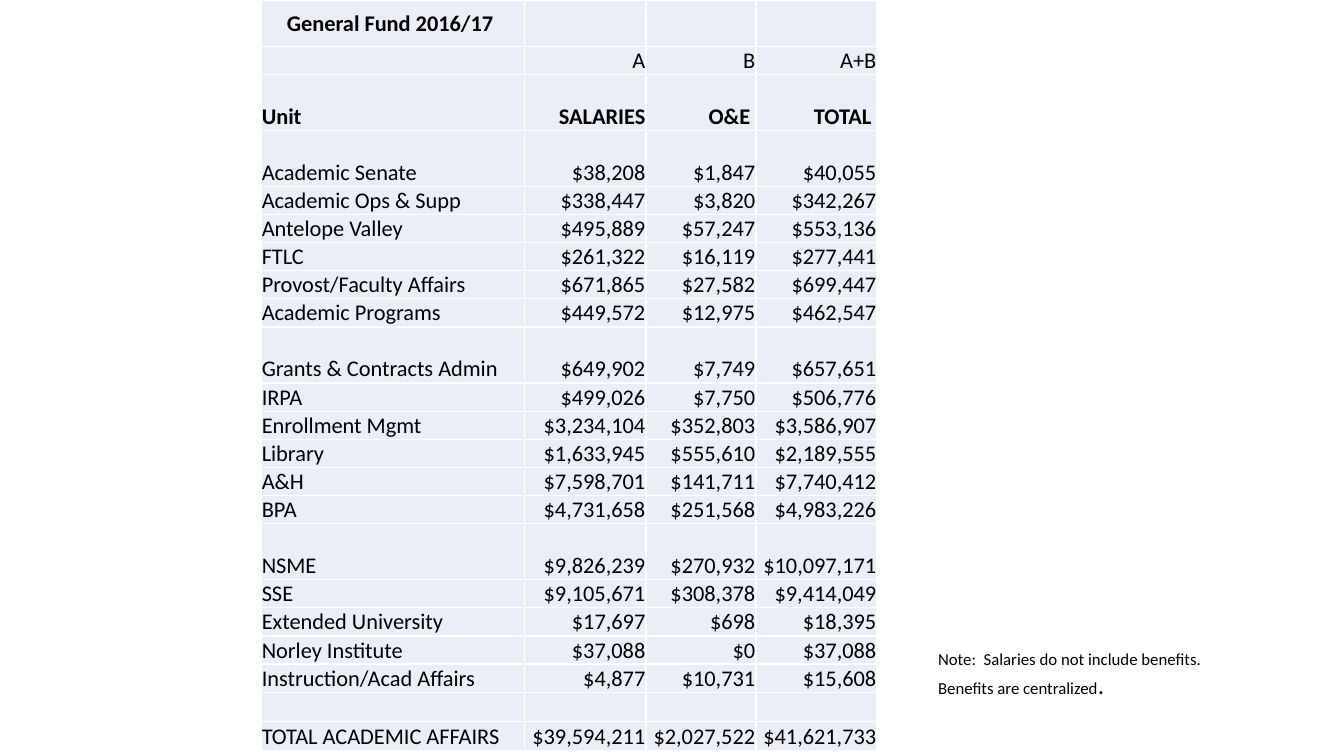
from lxml import etree
from pptx import Presentation
from pptx.dml.color import RGBColor
from pptx.enum.text import MSO_ANCHOR, MSO_AUTO_SIZE, PP_ALIGN
from pptx.oxml.ns import qn
from pptx.util import Pt

LEFT, MID, RIGHT = PP_ALIGN.LEFT, PP_ALIGN.CENTER, PP_ALIGN.RIGHT
CENTRE, BASE = MSO_ANCHOR.MIDDLE, MSO_ANCHOR.BOTTOM
GROW = MSO_AUTO_SIZE.SHAPE_TO_FIT_TEXT
FONT = "Calibri"
HUES = {"text": "000000", "band": "EAEFF7", "rule": "FFFFFF"}
COLS = (188, 87, 78.5, 86.5)
HIGH = {0: 33, 2: 40, 3: 40, 9: 40, 15: 40, 20: 20.7, 21: 20.7}
ROW = 20.1
FUNDS = [
    ("General Fund 2016/17 ", "", "", ""),
    ("", "A", "B", "A+B"),
    ("Unit", "SALARIES", "O&E ", "TOTAL "),
    ("Academic Senate", "$38,208", "$1,847", "$40,055"),
    ("Academic Ops & Supp", "$338,447", "$3,820", "$342,267"),
    ("Antelope Valley", "$495,889", "$57,247", "$553,136"),
    ("FTLC", "$261,322", "$16,119", "$277,441"),
    ("Provost/Faculty Affairs", "$671,865", "$27,582", "$699,447"),
    ("Academic Programs", "$449,572", "$12,975", "$462,547"),
    ("Grants & Contracts Admin", "$649,902", "$7,749", "$657,651"),
    ("IRPA", "$499,026", "$7,750", "$506,776"),
    ("Enrollment Mgmt", "$3,234,104", "$352,803", "$3,586,907"),
    ("Library", "$1,633,945", "$555,610", "$2,189,555"),
    ("A&H", "$7,598,701", "$141,711", "$7,740,412"),
    ("BPA", "$4,731,658", "$251,568", "$4,983,226"),
    ("NSME", "$9,826,239", "$270,932", "$10,097,171"),
    ("SSE", "$9,105,671", "$308,378", "$9,414,049"),
    ("Extended University", "$17,697", "$698", "$18,395"),
    ("Norley Institute", "$37,088", "$0", "$37,088"),
    ("Instruction/Acad Affairs", "$4,877", "$10,731", "$15,608"),
    ("", "", "", ""),
    ("TOTAL ACADEMIC AFFAIRS", "$39,594,211", "$2,027,522", "$41,621,733"),
]
NOTE = [
    [("Note:  Salaries do not include benefits.", 12)],
    [("Benefits are centralized", 12), (".", 18)],
]


def add_run(para, text, size, bold=False):
    """Add one styled run to a paragraph."""
    run = para.add_run()
    run.text = text
    run.font.name, run.font.size, run.font.bold = FONT, Pt(size), bold
    run.font.color.rgb = RGBColor.from_string(HUES["text"])


def add_rules(cell):
    """Draw thin white rules on the four sides of a cell."""
    props = cell._tc.get_or_add_tcPr()
    for spot, side in enumerate(("lnL", "lnR", "lnT", "lnB")):
        line = etree.Element(qn("a:" + side), w=str(Pt(1)))
        fill = etree.SubElement(line, qn("a:solidFill"))
        etree.SubElement(fill, qn("a:srgbClr"), val=HUES["rule"])
        props.insert(spot, line)


def fill_cell(cell, text, row, col):
    """Style one cell by its place in the table and write its text."""
    cell.fill.solid()
    cell.fill.fore_color.rgb = RGBColor.from_string(HUES["band"])
    add_rules(cell)
    cell.margin_left = cell.margin_right = cell.margin_top = Pt(0.5)
    cell.margin_bottom = 0
    cell.vertical_anchor = BASE if row else CENTRE
    para = cell.text_frame.paragraphs[0]
    para.alignment = RIGHT if col else LEFT if row else MID
    if text:
        add_run(para, text, 16, row in (0, 2))
    else:
        etree.SubElement(para._p, qn("a:endParaRPr"), sz="1600")


def add_funds(slide, left, top):
    """Place the fund table with its corner at the given point."""
    highs = [HIGH.get(row, ROW) for row in range(len(FUNDS))]
    frame = slide.shapes.add_table(len(FUNDS), len(COLS), Pt(left), Pt(top),
                                   Pt(sum(COLS)), Pt(sum(highs)))
    table = frame.table
    table.first_row = table.horz_banding = False
    for col, width in zip(table.columns, COLS):
        col.width = Pt(width)
    for row, high in enumerate(highs):
        table.rows[row].height = Pt(high)
        for col, text in enumerate(FUNDS[row]):
            fill_cell(table.cell(row, col), text, row, col)


def add_note(slide, left, top, width, height):
    """Place the note beside the table in the given box."""
    box = slide.shapes.add_textbox(Pt(left), Pt(top), Pt(width), Pt(height))
    frame = box.text_frame
    frame.word_wrap, frame.auto_size = True, GROW
    for spot, runs in enumerate(NOTE):
        para = frame.add_paragraph() if spot else frame.paragraphs[0]
        for text, size in runs:
            add_run(para, text, size)


def main():
    """Build the slide and save it."""
    deck = Presentation()
    deck.slide_width, deck.slide_height = Pt(960), Pt(540)
    slide = deck.slides.add_slide(deck.slide_layouts[6])
    add_funds(slide, 186.5, 0)
    add_note(slide, 663, 460, 297, 44)
    deck.save("out.pptx")


if __name__ == "__main__":
    main()
